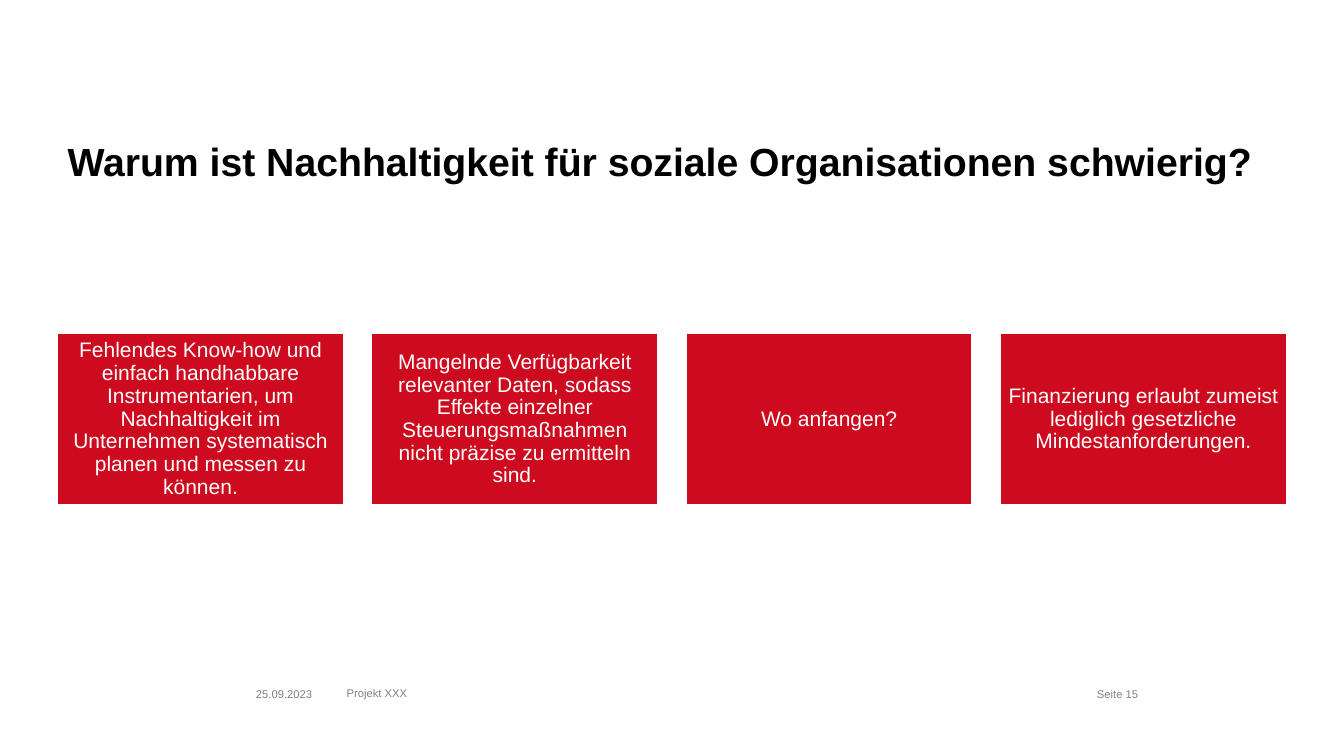
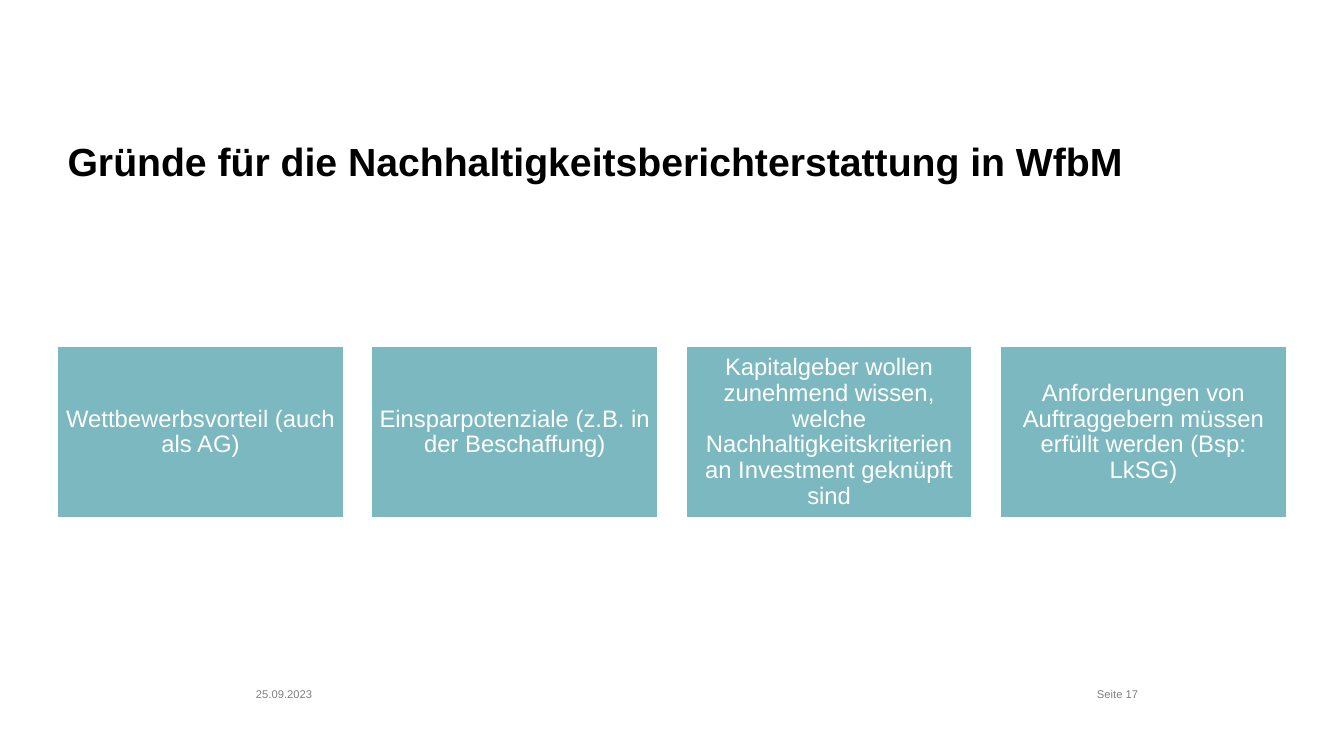
from pptx import Presentation
from pptx import util as u
from pptx.dml.color import RGBColor
from pptx.enum import shapes, text

WIDTH, HEIGHT = 13.33, 7.5
MARGIN, GAP, COLUMNS = 0.57, 0.28, 4
CARD_HEIGHT = 1.7
RED, TEAL, WHITE, BLACK, GRAY = "CD0A1E", "7CB8C0", "FFFFFF", "000000", "808080"
DEFAULT_INSETS = (0.1, 0.05, 0.1, 0.05)

TITLE_BOX = (MARGIN, 1.36, WIDTH - 2 * MARGIN, 0.51)
DATE_BOX = (2.44, 6.77, 0.78, 0.19)
PROJECT_BOX = (3.34, 6.76, 7.06, 0.19)
PAGE_BOX = (10.51, 6.77, 0.78, 0.18)

TITLE_FONT = {"name": "Arial", "size": u.Pt(28), "bold": True}
FOOTER_FONT = {"name": "Arial", "size": u.Pt(8)}

SLIDES = [
    {
        "title": "Warum ist Nachhaltigkeit für soziale Organisationen schwierig?",
        "cards": [
            "Fehlendes Know-how und einfach handhabbare Instrumentarien, um "
            "Nachhaltigkeit im Unternehmen systematisch planen und messen zu können.",
            "Mangelnde Verfügbarkeit relevanter Daten, sodass Effekte einzelner "
            "Steuerungsmaßnahmen nicht präzise zu ermitteln sind.",
            "Wo anfangen?",
            "Finanzierung erlaubt zumeist lediglich gesetzliche Mindestanforderungen.",
        ],
        "top": 3.31, "fill": RED, "size": 15, "inset": 0.06,
        "page": "Seite 15", "project": "Projekt XXX",
    },
    {
        "title": "Gründe für die Nachhaltigkeitsberichterstattung in WfbM",
        "cards": [
            "Wettbewerbsvorteil (auch als AG)",
            "Einsparpotenziale (z.B. in der Beschaffung)",
            "Kapitalgeber wollen zunehmend wissen, welche "
            "Nachhaltigkeitskriterien an Investment geknüpft sind",
            "Anforderungen von Auftraggebern müssen erfüllt werden (Bsp: LkSG)",
        ],
        "top": 3.44, "fill": TEAL, "size": 17, "inset": 0.07,
        "page": "Seite 17", "project": None,
    },
]


def color(hex_value):
    return RGBColor.from_string(hex_value)


def inches(box):
    return [u.Inches(length) for length in box]


def set_all(target, values):
    for name, value in values.items():
        setattr(target, name, value)


def write(shape, words, font, font_color, align=text.PP_ALIGN.LEFT,
          anchor=text.MSO_ANCHOR.TOP, insets=DEFAULT_INSETS, line_spacing=1.0):
    left, top, right, bottom = inches(insets)
    frame = shape.text_frame
    frame.text = words
    set_all(frame, {
        "word_wrap": True, "auto_size": text.MSO_AUTO_SIZE.NONE,
        "vertical_anchor": anchor, "margin_left": left, "margin_top": top,
        "margin_right": right, "margin_bottom": bottom,
    })
    paragraph = frame.paragraphs[0]
    set_all(paragraph, {"alignment": align, "line_spacing": line_spacing})
    set_all(paragraph.runs[0].font, font)
    paragraph.runs[0].font.color.rgb = color(font_color)


def add_title(slide, words, box):
    title = slide.shapes.title
    set_all(title, dict(zip(("left", "top", "width", "height"), inches(box))))
    write(title, words, TITLE_FONT, BLACK, line_spacing=0.9)


def add_card(slide, words, box, fill, size, inset):
    card = slide.shapes.add_shape(shapes.MSO_SHAPE.RECTANGLE, *inches(box))
    card.shadow.inherit = False
    card.fill.solid()
    card.fill.fore_color.rgb = color(fill)
    card.line.color.rgb = color(WHITE)
    card.line.width = u.Pt(1)
    write(card, words, {"name": "Arial", "size": u.Pt(size)}, WHITE,
          align=text.PP_ALIGN.CENTER, anchor=text.MSO_ANCHOR.MIDDLE,
          insets=(inset,) * 4, line_spacing=0.9)


def add_card_row(slide, cards, box, fill, size, inset):
    left, top, width, height = box
    card_width = (width - (COLUMNS - 1) * GAP) / COLUMNS
    for column, words in enumerate(cards):
        card_left = left + column * (card_width + GAP)
        add_card(slide, words, (card_left, top, card_width, height), fill, size, inset)


def add_footer(slide, page, project):
    entries = [("25.09.2023", DATE_BOX, {})]
    if project:
        entries.append((project, PROJECT_BOX, {}))
    entries.append((page, PAGE_BOX, {"align": text.PP_ALIGN.RIGHT,
                                     "insets": (0.1, 0.05, 0, 0.05)}))
    for words, box, layout in entries:
        write(slide.shapes.add_textbox(*inches(box)), words, FOOTER_FONT, GRAY, **layout)


def add_card_slide(presentation, content):
    slide = presentation.slides.add_slide(presentation.slide_layouts[5])
    add_title(slide, content["title"], TITLE_BOX)
    row_box = (MARGIN, content["top"], WIDTH - 2 * MARGIN, CARD_HEIGHT)
    add_card_row(slide, content["cards"], row_box,
                 content["fill"], content["size"], content["inset"])
    add_footer(slide, content["page"], content["project"])


def main():
    presentation = Presentation()
    set_all(presentation, {"slide_width": u.Inches(WIDTH), "slide_height": u.Inches(HEIGHT)})
    for content in SLIDES:
        add_card_slide(presentation, content)
    presentation.save("out.pptx")


if __name__ == "__main__":
    main()
